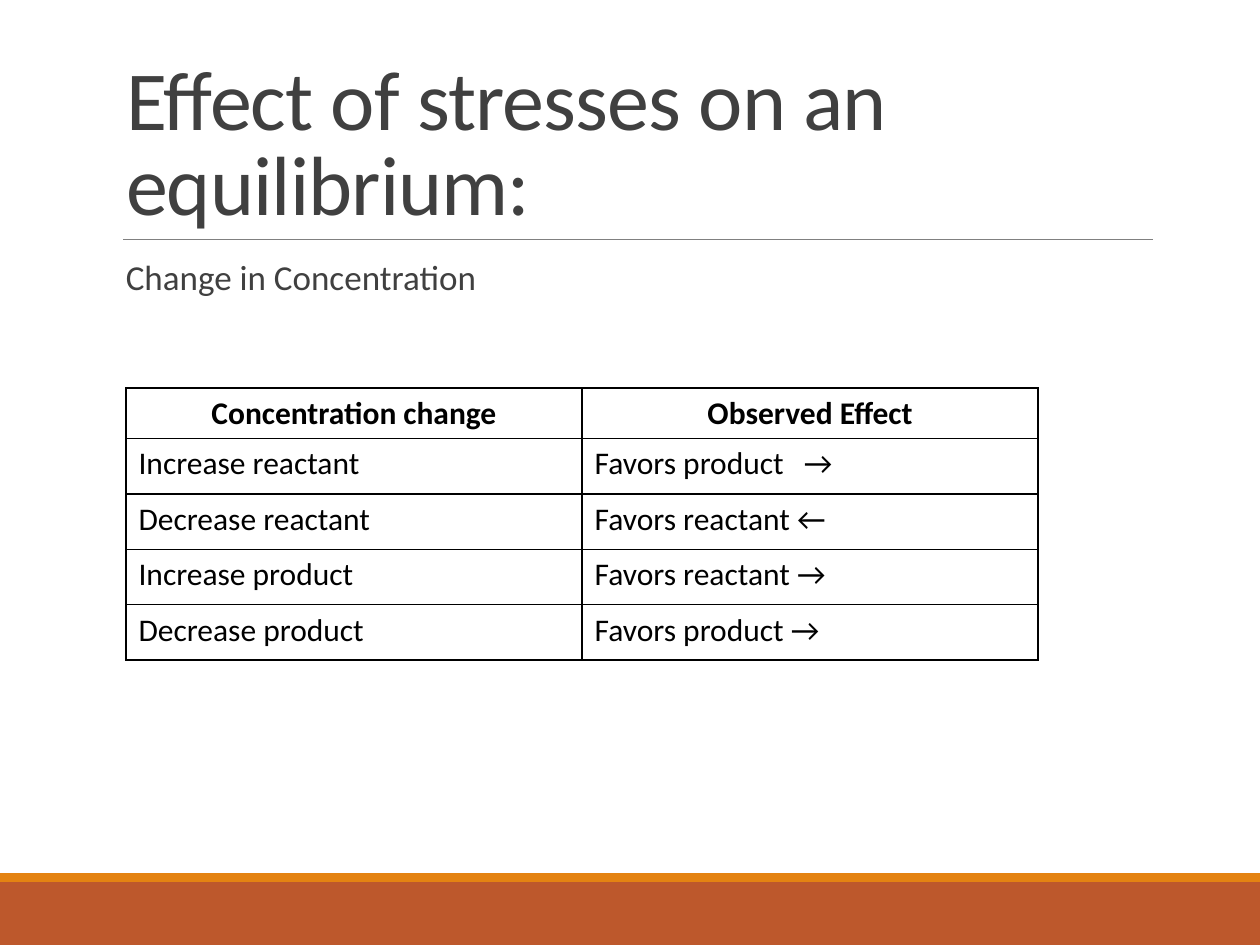
from lxml import etree
from pptx import Presentation
from pptx.dml.color import RGBColor
from pptx.enum import shapes, text
from pptx.oxml.ns import qn
from pptx.util import Inches, Pt

TITLE = "Effect of stresses on an equilibrium:"
SUBTITLE = "Change in Concentration"
ROWS = [
    ("Concentration change", "Observed Effect"),
    ("Increase reactant", "Favors product\t→"),
    ("Decrease reactant", "Favors reactant ←"),
    ("Increase product", "Favors reactant →"),
    ("Decrease product", "Favors product →"),
]
COLORS = {"rust": "BD582C", "orange": "E48312", "rule": "808080",
          "heading": "404040", "black": "000000"}
FONT = "Calibri"
BANDS = [(7, 0.5, "rust"), (6.93, 0.07, "orange")]  # top, height, colour
COLUMN_WIDTH, HEADER_HEIGHT, ROW_HEIGHT = 3.62, 0.4, 0.44
ARROW_TAB = 1.66


def color(name):
    return RGBColor.from_string(COLORS[name])


def style(para, size, name, bold=False):
    para.font.name, para.font.size, para.font.bold = FONT, Pt(size), bold
    para.font.color.rgb = color(name)


def add_borders(cell):
    properties = cell._tc.get_or_add_tcPr()
    for position, side in enumerate(("lnL", "lnR", "lnT", "lnB")):
        line = etree.Element(qn(f"a:{side}"), w=str(Pt(1)))
        fill = etree.SubElement(line, qn("a:solidFill"))
        etree.SubElement(fill, qn("a:srgbClr"), val=COLORS["black"])
        properties.insert(position, line)


def add_tab_stop(para, inches):
    stops = etree.SubElement(para._p.get_or_add_pPr(), qn("a:tabLst"))
    etree.SubElement(stops, qn("a:tab"), pos=str(Inches(inches)), algn="l")


deck = Presentation()
deck.slide_width, deck.slide_height = Inches(10), Inches(7.5)
page = deck.slides.add_slide(deck.slide_layouts[5])

# Footer bands
for top, height, name in BANDS:
    band = page.shapes.add_shape(shapes.MSO_SHAPE.RECTANGLE, 0, Inches(top),
                                 deck.slide_width, Inches(height))
    band.shadow.inherit = False
    band.fill.solid()
    band.fill.fore_color.rgb = color(name)
    band.line.fill.background()

# Rule under the title
rule = page.shapes.add_connector(shapes.MSO_CONNECTOR.STRAIGHT, Inches(0.98),
                                 Inches(1.9), Inches(9.15), Inches(1.9))
rule.line.color.rgb = color("rule")
rule.line.width = Pt(0.5)
etree.SubElement(rule._element.spPr, qn("a:effectLst"))

# Title
title = page.shapes.title
title.left, title.top = Inches(0.9), Inches(0.31)
title.width, title.height = Inches(8.25), Inches(1.59)
frame = title.text_frame
frame.text = TITLE
frame.word_wrap = True
frame.auto_size = text.MSO_AUTO_SIZE.NONE
frame.vertical_anchor = text.MSO_ANCHOR.BOTTOM
para = frame.paragraphs[0]
para.alignment = text.PP_ALIGN.LEFT
para.line_spacing = 0.85
style(para, 48, "heading")
para.runs[0]._r.get_or_add_rPr().set("spc", "-50")

# Subtitle
box = page.shapes.add_textbox(Inches(0.9), Inches(2.02), Inches(8.25), Inches(4.4))
frame = box.text_frame
frame.word_wrap = True
frame.text = SUBTITLE
para = frame.paragraphs[0]
para.line_spacing = 0.9
style(para, 20, "heading")

# Table of effects
table_height = HEADER_HEIGHT + ROW_HEIGHT * (len(ROWS) - 1)
table = page.shapes.add_table(len(ROWS), 2, Inches(1), Inches(3.08),
                              Inches(2 * COLUMN_WIDTH), Inches(table_height)).table
for row_index, values in enumerate(ROWS):
    header = row_index == 0
    table.rows[row_index].height = Inches(HEADER_HEIGHT if header else ROW_HEIGHT)
    for column_index, value in enumerate(values):
        cell = table.cell(row_index, column_index)
        cell.text = value
        cell.fill.background()
        add_borders(cell)
        para = cell.text_frame.paragraphs[0]
        para.alignment = text.PP_ALIGN.CENTER if header else text.PP_ALIGN.LEFT
        if "\t" in value:
            add_tab_stop(para, ARROW_TAB)
        style(para, 18, "black", bold=header)

deck.save("out.pptx")
